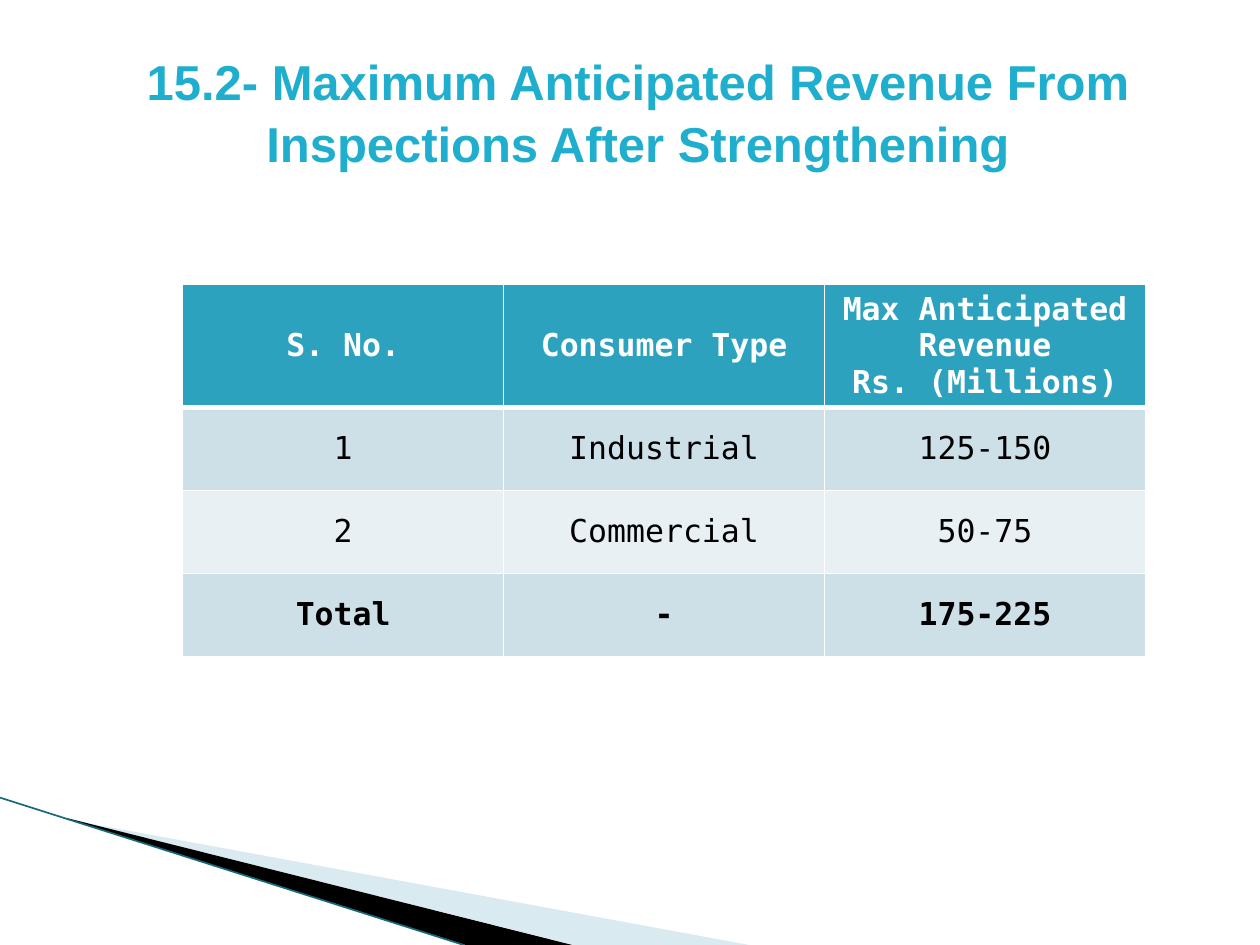
import dataclasses

import pptx
import pptx.dml.color
import pptx.enum.text
import pptx.oxml
import pptx.oxml.ns
import pptx.util

Pt = pptx.util.Pt
RGB = pptx.dml.color.RGBColor.from_string
DRAWING_NS = pptx.oxml.ns.nsdecls("a")


@dataclasses.dataclass(frozen=True)
class Theme:
    title: str = "1FAECD"
    header: str = "2DA2BF"
    band_dark: str = "CDE0E8"
    band_light: str = "E8F0F4"
    wedge: str = "A0CBDC"
    edge: str = "16697A"
    white: str = "FFFFFF"
    black: str = "000000"
    title_font: str = "Arial"
    table_font: str = "DejaVu Sans Mono"
    title_size: int = 28
    table_size: int = 18


theme = Theme()


def write(frame, text, *, font, size, color, bold=False, spacing=1.0):
    """Fill a text frame with centred text, one paragraph per line."""
    frame.word_wrap = True
    frame.text = text
    for paragraph in frame.paragraphs:
        paragraph.alignment = pptx.enum.text.PP_ALIGN.CENTER
        paragraph.line_spacing = spacing
        for run in paragraph.runs:
            run.font.name = font
            run.font.size = Pt(size)
            run.font.bold = bold
            run.font.color.rgb = RGB(color)


def add_border(cell, side, width):
    cell._tc.get_or_add_tcPr().append(pptx.oxml.parse_xml(
        f'<a:ln{side} {DRAWING_NS} w="{Pt(width)}"><a:solidFill>'
        f'<a:srgbClr val="{theme.white}"/></a:solidFill></a:ln{side}>'))


presentation = pptx.Presentation()
presentation.slide_width = Pt(720)
presentation.slide_height = Pt(540)
slide = presentation.slides.add_slide(presentation.slide_layouts[5])

# Title
title = slide.shapes.title
title.left, title.top, title.width, title.height = Pt(63.5), Pt(18), Pt(602), Pt(90)
title.text_frame.auto_size = pptx.enum.text.MSO_AUTO_SIZE.NONE
title.text_frame.vertical_anchor = pptx.enum.text.MSO_ANCHOR.MIDDLE
write(title.text_frame,
      "15.2- Maximum Anticipated Revenue From Inspections After Strengthening",
      font=theme.title_font, size=theme.title_size, color=theme.title,
      bold=True, spacing=1.06)

# Corner wedges: points, colour, opacity in percent
wedges = [
    ([(39.6, 468.5), (428, 540), (328, 540), (39.6, 468)], theme.wedge, 40),
    ([(38.2, 467.5), (327, 540), (266, 540), (38.9, 468)], theme.black, 100),
]
for points, color, opacity in wedges:
    corners = [(Pt(x), Pt(y)) for x, y in points]
    builder = slide.shapes.build_freeform(*corners[0])
    builder.add_line_segments(corners[1:], close=True)
    wedge = builder.convert_to_shape()
    wedge.shadow.inherit = False
    wedge.line.fill.background()
    wedge.fill.solid()
    wedge.fill.fore_color.rgb = RGB(color)
    if opacity < 100:
        color_element = wedge._element.spPr.find(".//" + pptx.oxml.ns.qn("a:srgbClr"))
        color_element.append(pptx.oxml.parse_xml(
            f'<a:alpha {DRAWING_NS} val="{opacity * 1000}"/>'))

edge = slide.shapes.add_connector(
    pptx.enum.shapes.MSO_CONNECTOR.STRAIGHT, Pt(0), Pt(455.8), Pt(265), Pt(540))
edge.line.color.rgb = RGB(theme.edge)
edge.line.width = Pt(0.95)
edge._element.spPr.append(pptx.oxml.parse_xml(f"<a:effectLst {DRAWING_NS}/>"))

# Revenue table
rows = [
    ["S. No.", "Consumer Type", "Max Anticipated Revenue\nRs. (Millions)"],
    ["1", "Industrial", "125-150"],
    ["2", "Commercial", "50-75"],
    ["Total", "-", "175-225"],
]
row_heights = [70, 47.5, 47.5, 47.5]
column_width = 183.4
table = slide.shapes.add_table(
    len(rows), len(rows[0]), Pt(104.4), Pt(162.7),
    Pt(column_width * len(rows[0])), Pt(sum(row_heights))).table
for column in table.columns:
    column.width = Pt(column_width)
for row_index, (values, height) in enumerate(zip(rows, row_heights)):
    table.rows[row_index].height = Pt(height)
    is_header = row_index == 0
    is_total = row_index == len(rows) - 1
    band = theme.band_dark if row_index % 2 else theme.band_light
    for cell, value in zip(table.rows[row_index].cells, values):
        cell.vertical_anchor = pptx.enum.text.MSO_ANCHOR.MIDDLE
        for side in "LRTB":
            header_rule = (is_header and side == "B") or (row_index == 1 and side == "T")
            add_border(cell, side, 3 if header_rule else 1)
        cell.fill.solid()
        cell.fill.fore_color.rgb = RGB(theme.header if is_header else band)
        write(cell.text_frame, value, font=theme.table_font, size=theme.table_size,
              color=theme.white if is_header else theme.black,
              bold=is_header or is_total)

presentation.save("out.pptx")
